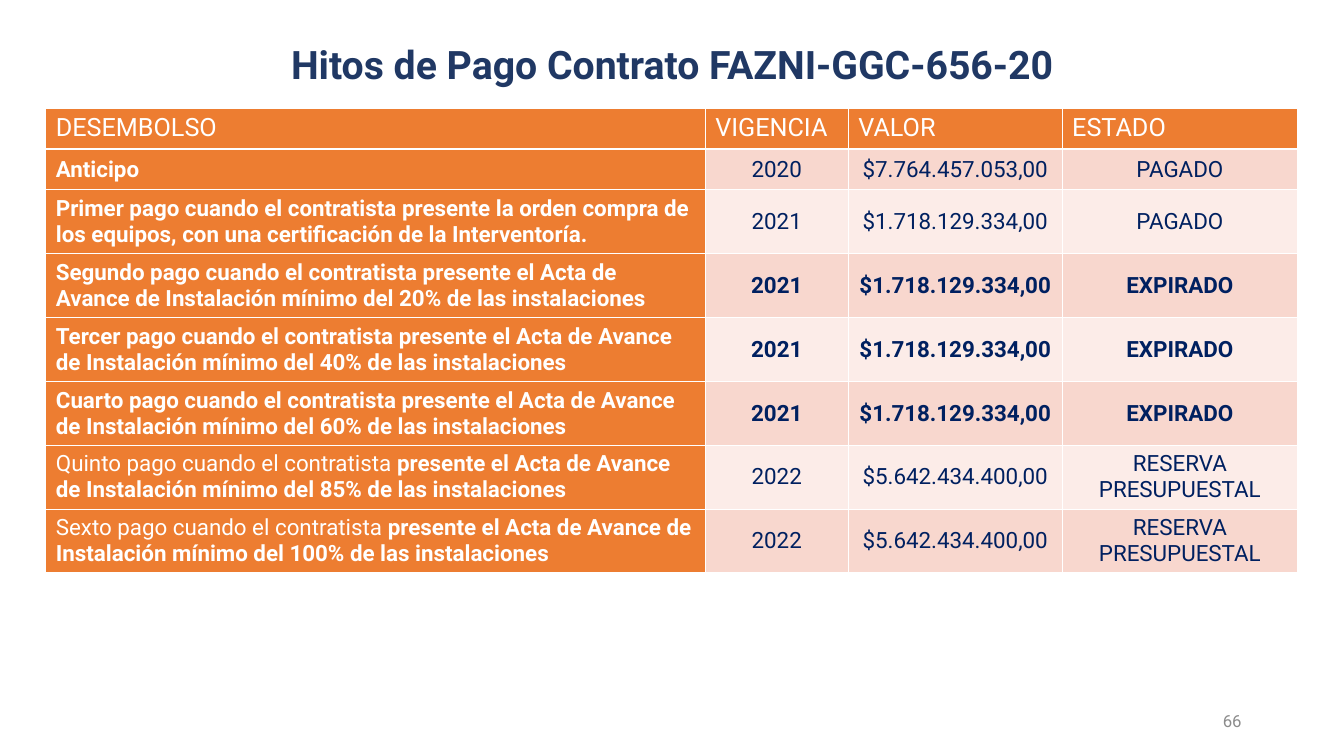
from typing import NamedTuple

from lxml.etree import SubElement
from pptx import Presentation
from pptx.dml.color import RGBColor
from pptx.enum.text import MSO_ANCHOR, MSO_AUTO_SIZE, PP_ALIGN
from pptx.oxml.ns import qn
from pptx.util import Pt

FONT = "Roboto"
WHITE, NAVY, TITLE_BLUE, GREY = "FFFFFF", "002060", "203864", "8C8C8C"
ORANGE, BANDS = "ED7D31", ("F8D7CE", "FCECE8")
HEADINGS = ("DESEMBOLSO", "VIGENCIA", "VALOR", "ESTADO")
COLUMN_WIDTHS = (471, 102.25, 152.75, 168.25)
ROW_HEIGHT = 29.2  # rows with two lines grow to fit
INSTALLED = "de Instalación mínimo del"


class Milestone(NamedTuple):
    light: str
    strong: str
    year: str
    amount: str
    status: str


def progress(percent: int) -> str:
    return (f"presente el Acta de Avance {INSTALLED} {percent}% "
            "de las instalaciones")


def expired(ordinal: str, percent: int) -> Milestone:
    return Milestone("", f"{ordinal} pago cuando el contratista {progress(percent)}",
                     "2021", "$1.718.129.334,00", "EXPIRADO")


def reserved(ordinal: str, percent: int) -> Milestone:
    return Milestone(f"{ordinal} pago cuando el contratista ", progress(percent),
                     "2022", "$5.642.434.400,00", "RESERVA PRESUPUESTAL")


MILESTONES = (
    Milestone("", "Anticipo", "2020", "$7.764.457.053,00", "PAGADO"),
    Milestone("", "Primer pago cuando el contratista presente la orden compra de "
              "los equipos, con una certificación de la Interventoría.",
              "2021", "$1.718.129.334,00", "PAGADO"),
    expired("Segundo", 20),
    expired("Tercer", 40),
    expired("Cuarto", 60),
    reserved("Quinto", 85),
    reserved("Sexto", 100),
)


def rgb(value: str) -> RGBColor:
    return RGBColor.from_string(value)


def style(paragraph, size: float, color: str, bold: bool | None = False,
          align: PP_ALIGN = PP_ALIGN.LEFT) -> None:
    paragraph.alignment = align
    font = paragraph.font
    font.name, font.size, font.bold = FONT, Pt(size), bold
    font.color.rgb = rgb(color)


def format_cell(cell, fill: str, anchor: MSO_ANCHOR = MSO_ANCHOR.MIDDLE) -> None:
    cell.vertical_anchor = anchor
    properties = cell._tc.get_or_add_tcPr()
    for side in "LRTB":
        line = SubElement(properties, qn(f"a:ln{side}"), w=str(Pt(1)))
        SubElement(SubElement(line, qn("a:solidFill")), qn("a:srgbClr"), val=WHITE)
    cell.fill.solid()
    cell.fill.fore_color.rgb = rgb(fill)


def add_title(slide) -> None:
    title = slide.shapes.title
    title.left, title.top, title.width, title.height = Pt(66), Pt(0), Pt(828), Pt(66.5)
    frame = title.text_frame
    frame.text = "Hitos de Pago Contrato FAZNI-GGC-656-20"
    frame.word_wrap, frame.auto_size = True, MSO_AUTO_SIZE.NONE
    frame.vertical_anchor = MSO_ANCHOR.BOTTOM
    style(frame.paragraphs[0], 28, TITLE_BLUE, True, PP_ALIGN.CENTER)
    frame.paragraphs[0].line_spacing = 0.9


def add_page_number(slide) -> None:
    number = slide.shapes.add_textbox(Pt(678), Pt(500.5), Pt(216), Pt(28.75))
    frame = number.text_frame
    frame.text, frame.word_wrap = "66", True
    frame.vertical_anchor = MSO_ANCHOR.MIDDLE
    style(frame.paragraphs[0], 12, GREY, align=PP_ALIGN.RIGHT)


def fill_milestone(cells, milestone: Milestone, band: str) -> None:
    concept, *details = cells
    format_cell(concept, ORANGE)
    if milestone.light:
        paragraph = concept.text_frame.paragraphs[0]
        style(paragraph, 16, WHITE, None)
        for text, bold in ((milestone.light, False), (milestone.strong, True)):
            run = paragraph.add_run()
            run.text, run.font.bold = text, bold
    else:
        concept.text = milestone.strong
        style(concept.text_frame.paragraphs[0], 16, WHITE, True)

    is_expired = milestone.status == "EXPIRADO"
    for cell, text in zip(details, (milestone.year, milestone.amount, milestone.status)):
        cell.text = text
        format_cell(cell, band)
        style(cell.text_frame.paragraphs[0], 16, NAVY, is_expired, PP_ALIGN.CENTER)


def add_payments(slide) -> None:
    row_count = len(MILESTONES) + 1
    payments = slide.shapes.add_table(
        row_count, len(HEADINGS), Pt(32.75), Pt(77.25),
        Pt(sum(COLUMN_WIDTHS)), Pt(row_count * ROW_HEIGHT)).table
    for column, width in zip(payments.columns, COLUMN_WIDTHS):
        column.width = Pt(width)

    # Heading row
    for cell, heading in zip(payments.rows[0].cells, HEADINGS):
        cell.text = heading
        format_cell(cell, ORANGE, MSO_ANCHOR.TOP)
        style(cell.text_frame.paragraphs[0], 18, WHITE)

    # Payment milestones in alternating bands
    for index, milestone in enumerate(MILESTONES):
        fill_milestone(payments.rows[index + 1].cells, milestone, BANDS[index % 2])


def main() -> None:
    presentation = Presentation()
    presentation.slide_width, presentation.slide_height = Pt(960), Pt(540)
    slide = presentation.slides.add_slide(
        presentation.slide_layouts.get_by_name("Title Only"))
    add_title(slide)
    add_page_number(slide)
    add_payments(slide)
    presentation.save("out.pptx")


if __name__ == "__main__":
    main()
